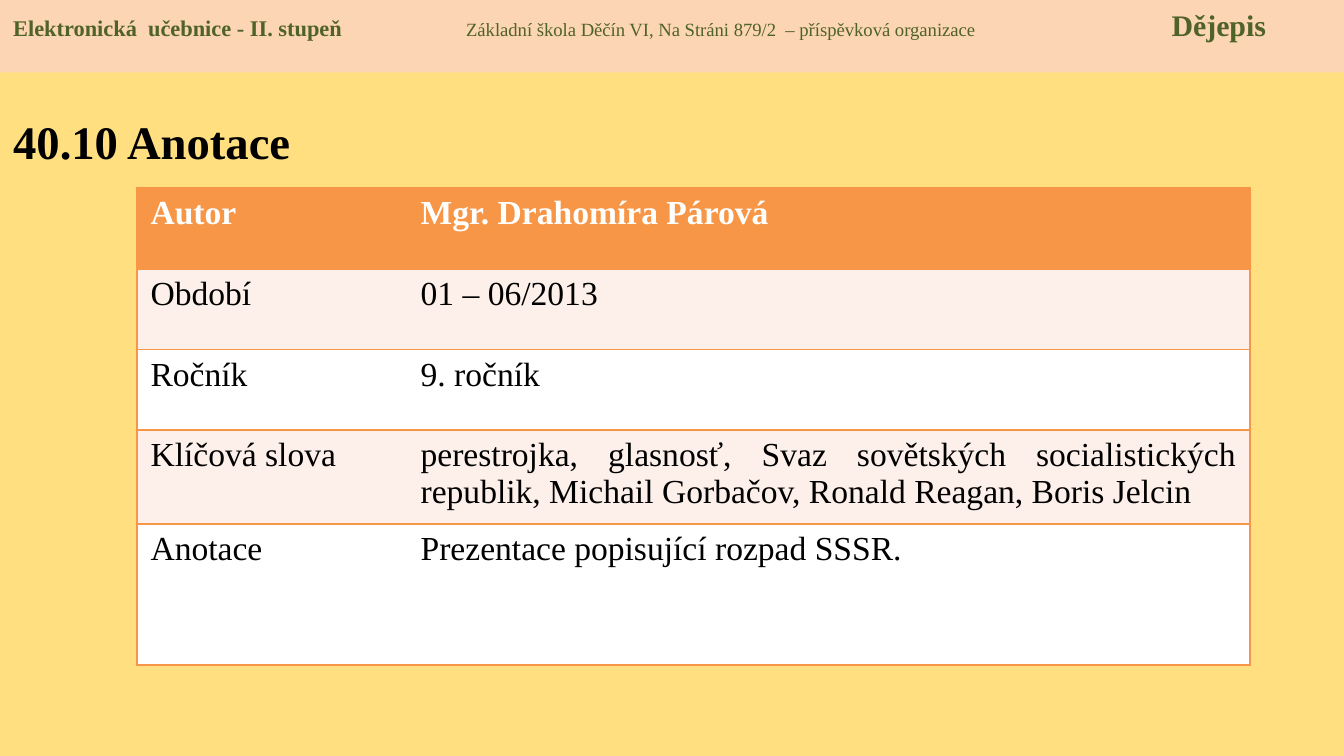
from dataclasses import dataclass

import lxml.etree
import pptx
import pptx.dml.color
import pptx.enum.shapes
import pptx.enum.text
import pptx.oxml
import pptx.oxml.ns
import pptx.util

Inches = pptx.util.Inches
Pt = pptx.util.Pt
qn = pptx.oxml.ns.qn

SLIDE_WIDTH = Inches(10)
SLIDE_HEIGHT = SLIDE_WIDTH * 9 // 16
FONT = "Times New Roman"
COLORS = {
    "background": "FFDF80",
    "header": "FCD5B5",
    "header_text": "4F6228",
    "accent": "F79646",
    "band": "FDEFE9",
    "white": "FFFFFF",
    "black": "000000",
}


@dataclass
class HeaderPart:
    text: str
    size: float
    bold: bool
    tab: float = 0


@dataclass
class AnnotationRow:
    label: str
    value: str
    height: float = 0.6


HEADER_PARTS = [
    HeaderPart("Elektronická  učebnice - II. stupeň", 12, True),
    HeaderPart("Základní škola Děčín VI, Na Stráni 879/2  – příspěvková organizace", 10, False, 3.37),
    HeaderPart("Dějepis", 16, True, 8.62),
]
ROWS = [
    AnnotationRow("Autor", "Mgr. Drahomíra Párová"),
    AnnotationRow("Období", "01 – 06/2013"),
    AnnotationRow("Ročník", "9. ročník"),
    AnnotationRow(
        "Klíčová slova",
        "perestrojka, glasnosť, Svaz sovětských socialistických republik, "
        "Michail Gorbačov, Ronald Reagan, Boris Jelcin",
        0.7,
    ),
    AnnotationRow("Anotace", "Prezentace popisující rozpad SSSR.", 1.05),
]
COLUMN_WIDTHS = [2.01, 6.27]


def rgb(name: str) -> pptx.dml.color.RGBColor:
    return pptx.dml.color.RGBColor.from_string(COLORS[name])


def add_text(paragraph, text: str, *, size: float, color: str, bold: bool = False) -> None:
    run = paragraph.add_run()
    run.text = text
    run.font.name = FONT
    run.font.size = Pt(size)
    run.font.bold = bold
    run.font.color.rgb = rgb(color)


def add_header(slide) -> None:
    """Draw the top bar, its parts set apart by tab stops."""
    bar = slide.shapes.add_shape(
        pptx.enum.shapes.MSO_SHAPE.RECTANGLE, 0, 0, SLIDE_WIDTH, Inches(0.54)
    )
    bar.shadow.inherit = False
    bar.fill.solid()
    bar.fill.fore_color.rgb = rgb("header")
    bar.line.fill.background()
    frame = bar.text_frame
    frame.vertical_anchor = pptx.enum.text.MSO_ANCHOR.TOP
    paragraph = frame.paragraphs[0]
    paragraph.alignment = pptx.enum.text.PP_ALIGN.LEFT
    tabs = lxml.etree.SubElement(paragraph._p.get_or_add_pPr(), qn("a:tabLst"))
    for part in HEADER_PARTS:
        if part.tab:
            lxml.etree.SubElement(tabs, qn("a:tab"), pos=str(Inches(part.tab)), algn="l")
        text = "\t" + part.text if part.tab else part.text
        add_text(paragraph, text, size=part.size, color="header_text", bold=part.bold)


def add_title(slide) -> None:
    frame = slide.shapes.add_textbox(0, Inches(0.53), Inches(3.74), Inches(0.65)).text_frame
    frame.word_wrap = True
    frame.margin_top = Inches(0.31)
    frame.margin_bottom = 0
    add_text(frame.paragraphs[0], "40.10 Anotace", size=25, color="black", bold=True)


def set_borders(cell, visible: str) -> None:
    """Draw the sides named in visible (from L, R, T, B) and hide the others."""
    properties = cell._tc.get_or_add_tcPr()
    for index, side in enumerate("LRTB"):
        line = properties.makeelement(qn(f"a:ln{side}"), {"w": str(Pt(1))})
        properties.insert(index, line)
        if side in visible:
            fill = lxml.etree.SubElement(line, qn("a:solidFill"))
            lxml.etree.SubElement(fill, qn("a:srgbClr"), val=COLORS["accent"])
        else:
            lxml.etree.SubElement(line, qn("a:noFill"))


def add_annotation_table(slide) -> None:
    table = slide.shapes.add_table(
        len(ROWS), len(COLUMN_WIDTHS), Inches(1.02), Inches(1.4),
        Inches(sum(COLUMN_WIDTHS)), Inches(sum(row.height for row in ROWS)),
    ).table
    for column, width in zip(table.columns, COLUMN_WIDTHS):
        column.width = Inches(width)
    for row_index, row in enumerate(ROWS):
        table.rows[row_index].height = Inches(row.height)
        is_heading = row_index == 0
        fill = "accent" if is_heading else "band" if row_index % 2 else "white"
        for column_index, text in enumerate((row.label, row.value)):
            cell = table.cell(row_index, column_index)
            set_borders(cell, "TB" + "LR"[column_index])
            cell.fill.solid()
            cell.fill.fore_color.rgb = rgb(fill)
            paragraph = cell.text_frame.paragraphs[0]
            paragraph.alignment = pptx.enum.text.PP_ALIGN.JUSTIFY
            add_text(paragraph, text, size=18, bold=is_heading,
                     color="white" if is_heading else "black")


def main() -> None:
    presentation = pptx.Presentation()
    presentation.slide_width = SLIDE_WIDTH
    presentation.slide_height = SLIDE_HEIGHT
    slide = presentation.slides.add_slide(presentation.slide_layouts[6])
    slide.background.fill.solid()
    slide.background.fill.fore_color.rgb = rgb("background")
    add_header(slide)
    add_annotation_table(slide)
    add_title(slide)
    presentation.save("out.pptx")


if __name__ == "__main__":
    main()
